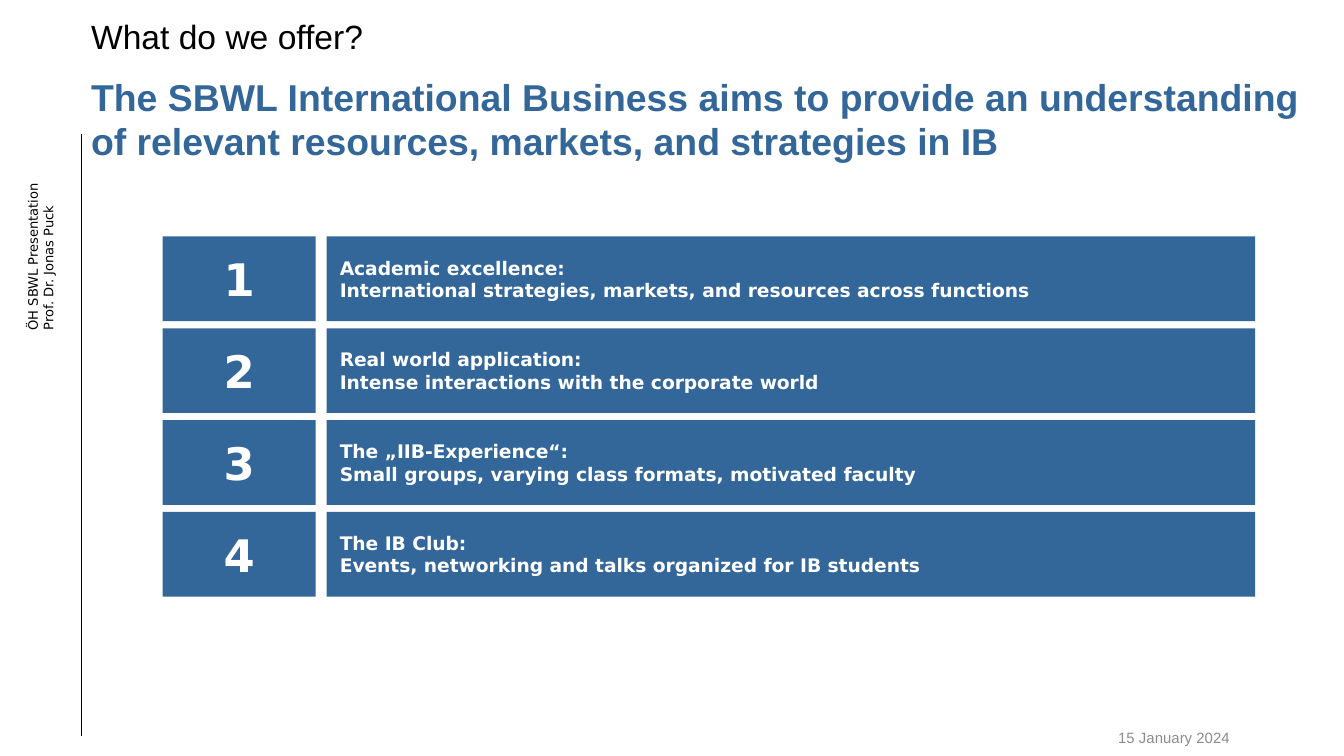
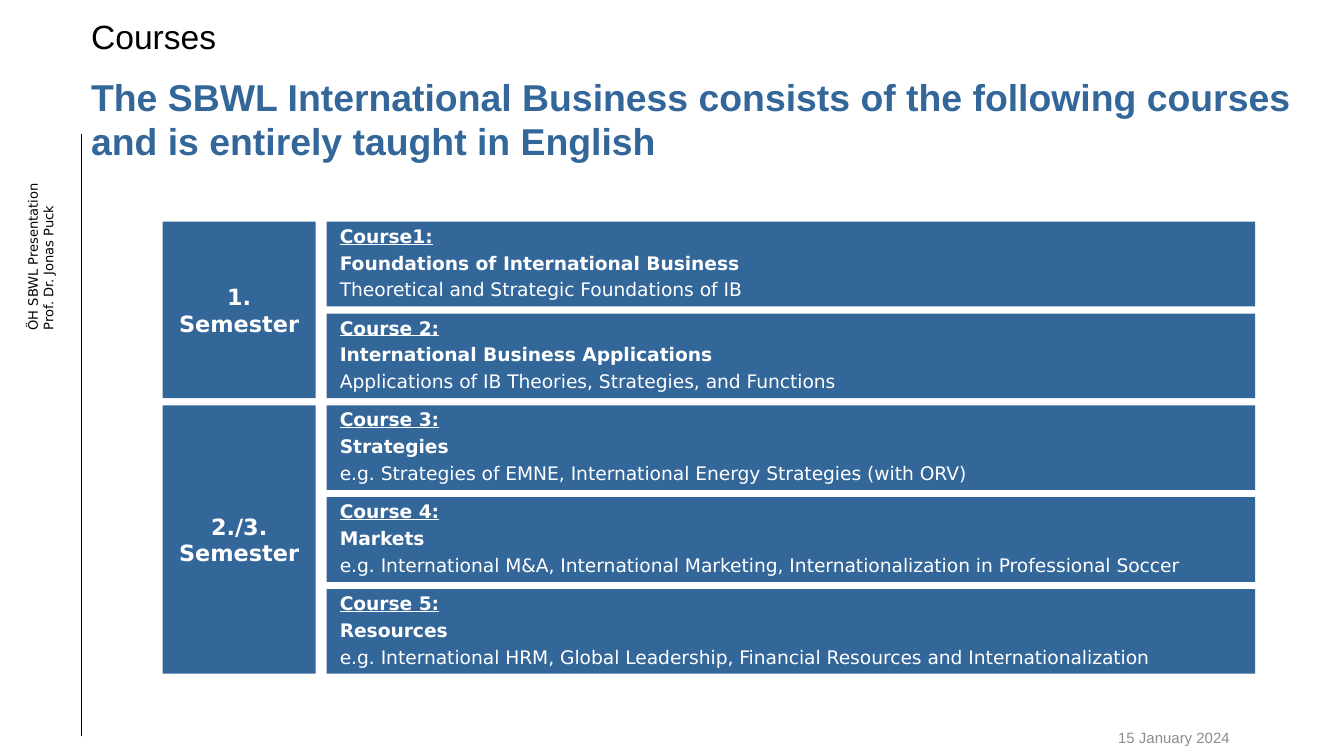
from dataclasses import dataclass

from lxml import etree
from pptx import Presentation
from pptx import util as u
from pptx.dml.color import RGBColor
from pptx.enum import shapes, text
from pptx.oxml.ns import qn

COLOURS = {"blue": "336699", "black": "000000", "white": "FFFFFF", "grey": "8C8C8C"}
HEADING_FONT = "Arial"
CONTENT_FONT = "DejaVu Sans"

SLIDE_WIDTH = u.Inches(10)
SLIDE_HEIGHT = SLIDE_WIDTH * 9 // 16
LABEL_LEFT, LABEL_WIDTH = 1.21, 1.14
BAR_LEFT, BAR_WIDTH = 2.43, 6.91
ROW_HEIGHT = 0.63
ROW_PITCH = 2.05 / 3


@dataclass(frozen=True)
class Style:
    size: float
    colour: str
    font: str = CONTENT_FONT
    bold: bool = False
    underline: bool = False
    align: text.PP_ALIGN = text.PP_ALIGN.LEFT
    line_spacing: float | None = None
    space_after: float | None = None


@dataclass(frozen=True)
class Label:
    caption: str
    rows: int = 1


@dataclass(frozen=True)
class Page:
    topic: str
    headline: str
    top: float
    labels: list[Label]
    bars: list[list[str]]
    label_style: Style
    bar_styles: list[Style]


TOPIC = Style(18, "black", HEADING_FONT)
HEADLINE = Style(20, "blue", HEADING_FONT, bold=True)
DATE = Style(8, "grey", HEADING_FONT, align=text.PP_ALIGN.RIGHT)
SIDE_NOTE = Style(7, "black")
NUMBER = Style(24, "white", bold=True, align=text.PP_ALIGN.CENTER)
SEMESTER = Style(12, "white", bold=True, align=text.PP_ALIGN.CENTER)
OFFER = Style(10, "white", bold=True)
COURSE_NUMBER = Style(10, "white", bold=True, underline=True,
                      line_spacing=0.9, space_after=3.5)
COURSE_NAME = Style(10, "white", bold=True, line_spacing=0.9, space_after=3.5)
COURSE_TOPICS = Style(10, "white", line_spacing=0.9, space_after=3.5)

PAGES = [
    Page(
        topic="What do we offer?",
        headline="The SBWL International Business aims to provide an understanding "
                 "of relevant resources, markets, and strategies in IB",
        top=1.76,
        labels=[Label(str(number)) for number in range(1, 5)],
        bars=[
            ["Academic excellence:",
             "International strategies, markets, and resources across functions"],
            ["Real world application:", "Intense interactions with the corporate world"],
            ["The „IIB-Experience“:",
             "Small groups, varying class formats, motivated faculty"],
            ["The IB Club:", "Events, networking and talks organized for IB students"],
        ],
        label_style=NUMBER,
        bar_styles=[OFFER, OFFER],
    ),
    Page(
        topic="Courses",
        headline="The SBWL International Business consists of the following courses "
                 "and is entirely taught in English",
        top=1.65,
        labels=[Label("1. Semester", 2), Label("2./3. Semester", 3)],
        bars=[
            ["Course1:", "Foundations of International Business",
             "Theoretical and Strategic Foundations of IB"],
            ["Course 2:", "International Business Applications",
             "Applications of IB Theories, Strategies, and Functions"],
            ["Course 3:", "Strategies",
             "e.g. Strategies of EMNE, International Energy Strategies (with ORV)"],
            ["Course 4:", "Markets",
             "e.g. International M&A, International Marketing, "
             "Internationalization in Professional Soccer"],
            ["Course 5:", "Resources",
             "e.g. International HRM, Global Leadership, "
             "Financial Resources and Internationalization"],
        ],
        label_style=SEMESTER,
        bar_styles=[COURSE_NUMBER, COURSE_NAME, COURSE_TOPICS],
    ),
]


def rgb(colour: str) -> RGBColor:
    return RGBColor.from_string(COLOURS[colour])


def write(shape, lines: list[str], styles: list[Style], middle: bool = True) -> None:
    """Fill a shape with one paragraph per line, each in its own style."""
    frame = shape.text_frame
    frame.word_wrap = True
    frame.vertical_anchor = text.MSO_ANCHOR.MIDDLE if middle else text.MSO_ANCHOR.TOP
    for index, (line, style) in enumerate(zip(lines, styles)):
        paragraph = frame.add_paragraph() if index else frame.paragraphs[0]
        paragraph.text = line
        paragraph.alignment = style.align
        if style.line_spacing is not None:
            paragraph.line_spacing = style.line_spacing
        if style.space_after is not None:
            paragraph.space_after = u.Pt(style.space_after)
        font = paragraph.font
        font.name, font.size = style.font, u.Pt(style.size)
        font.bold, font.underline = style.bold, style.underline
        font.color.rgb = rgb(style.colour)


def add_text(slide, left: float, top: float, width: float, height: float,
             lines: list[str], style: Style, middle: bool = True):
    box = slide.shapes.add_textbox(*map(u.Inches, (left, top, width, height)))
    write(box, lines, [style] * len(lines), middle)
    return box


def add_block(slide, left: float, top: float, width: float, rows: int,
              lines: list[str], styles: list[Style]) -> None:
    """Add a blue rectangle that spans the given number of rows."""
    height = ROW_HEIGHT + (rows - 1) * ROW_PITCH
    block = slide.shapes.add_shape(shapes.MSO_SHAPE.RECTANGLE,
                                   *map(u.Inches, (left, top, width, height)))
    block.shadow.inherit = False
    block.fill.solid()
    block.fill.fore_color.rgb = rgb("blue")
    block.line.fill.background()
    write(block, lines, styles)


def add_frame(slide, page: Page) -> None:
    """Add the margin rule, side note, date and headings."""
    rule = slide.shapes.add_connector(shapes.MSO_CONNECTOR.STRAIGHT,
                                      *map(u.Inches, (0.61, 5.48, 0.61, 1)))
    rule.line.color.rgb = rgb("black")
    rule.line.width = u.Pt(0.5)
    etree.SubElement(rule._element.spPr, qn("a:effectLst"))

    side_note = add_text(slide, -0.47, 1.61, 1.55, 0.34,
                         ["ÖH SBWL Presentation", "Prof. Dr. Jonas Puck"],
                         SIDE_NOTE, middle=False)
    side_note.rotation = 270
    add_text(slide, 6.92, 5.37, 2.33, 0.24, ["15 January 2024"], DATE)
    add_text(slide, 0.58, 0.5, 9.2, 0.38, [page.headline], HEADLINE, middle=False)
    add_text(slide, 0.58, 0.15, 6.03, 0.24, [page.topic], TOPIC)


def add_page(deck, page: Page) -> None:
    slide = deck.slides.add_slide(deck.slide_layouts[6])
    add_frame(slide, page)
    row = 0
    for label in page.labels:
        add_block(slide, LABEL_LEFT, page.top + row * ROW_PITCH, LABEL_WIDTH,
                  label.rows, [label.caption], [page.label_style])
        row += label.rows
    for row, lines in enumerate(page.bars):
        add_block(slide, BAR_LEFT, page.top + row * ROW_PITCH, BAR_WIDTH,
                  1, lines, page.bar_styles)


def main() -> None:
    deck = Presentation()
    deck.slide_width, deck.slide_height = SLIDE_WIDTH, SLIDE_HEIGHT
    for page in PAGES:
        add_page(deck, page)
    deck.save("out.pptx")


if __name__ == "__main__":
    main()
